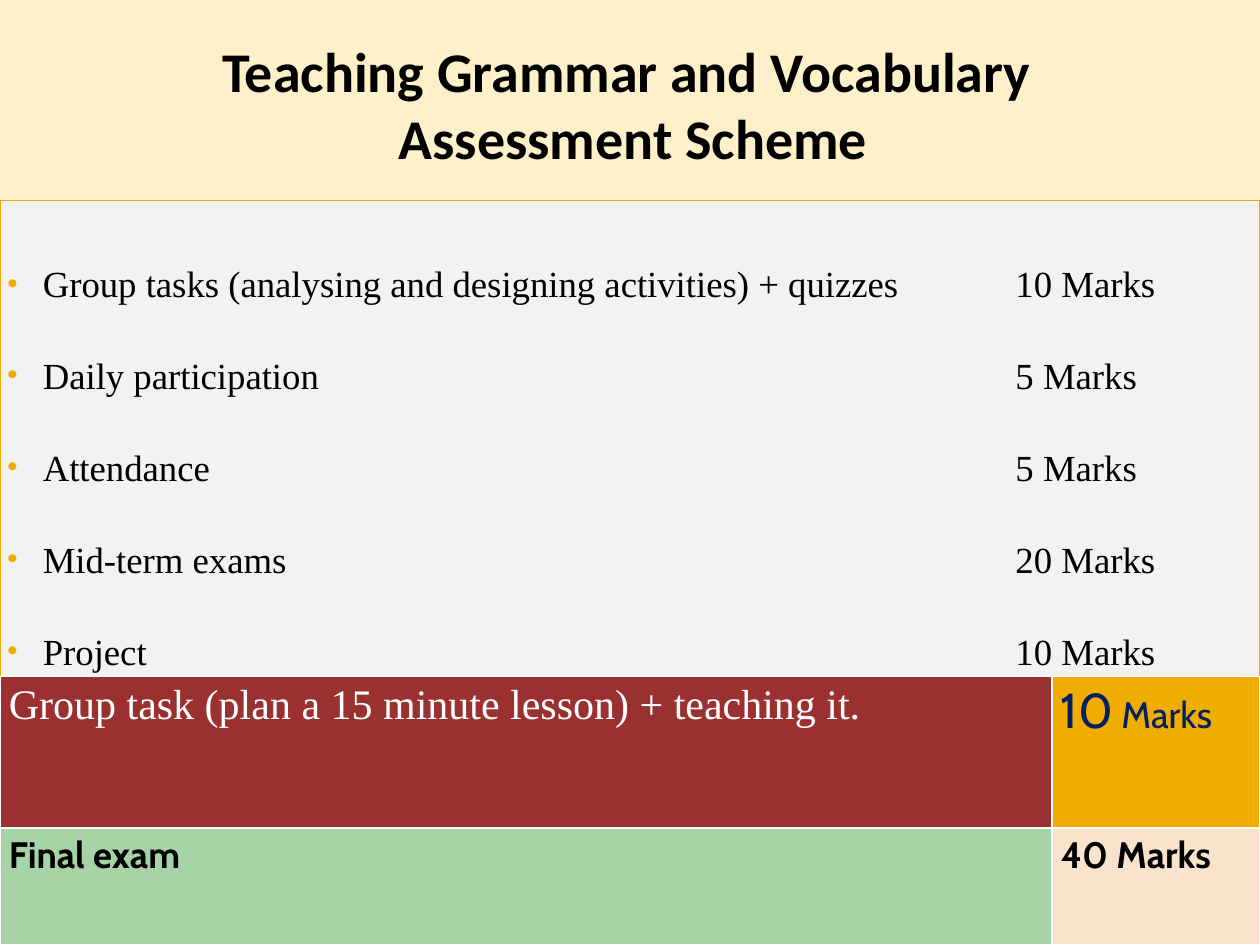
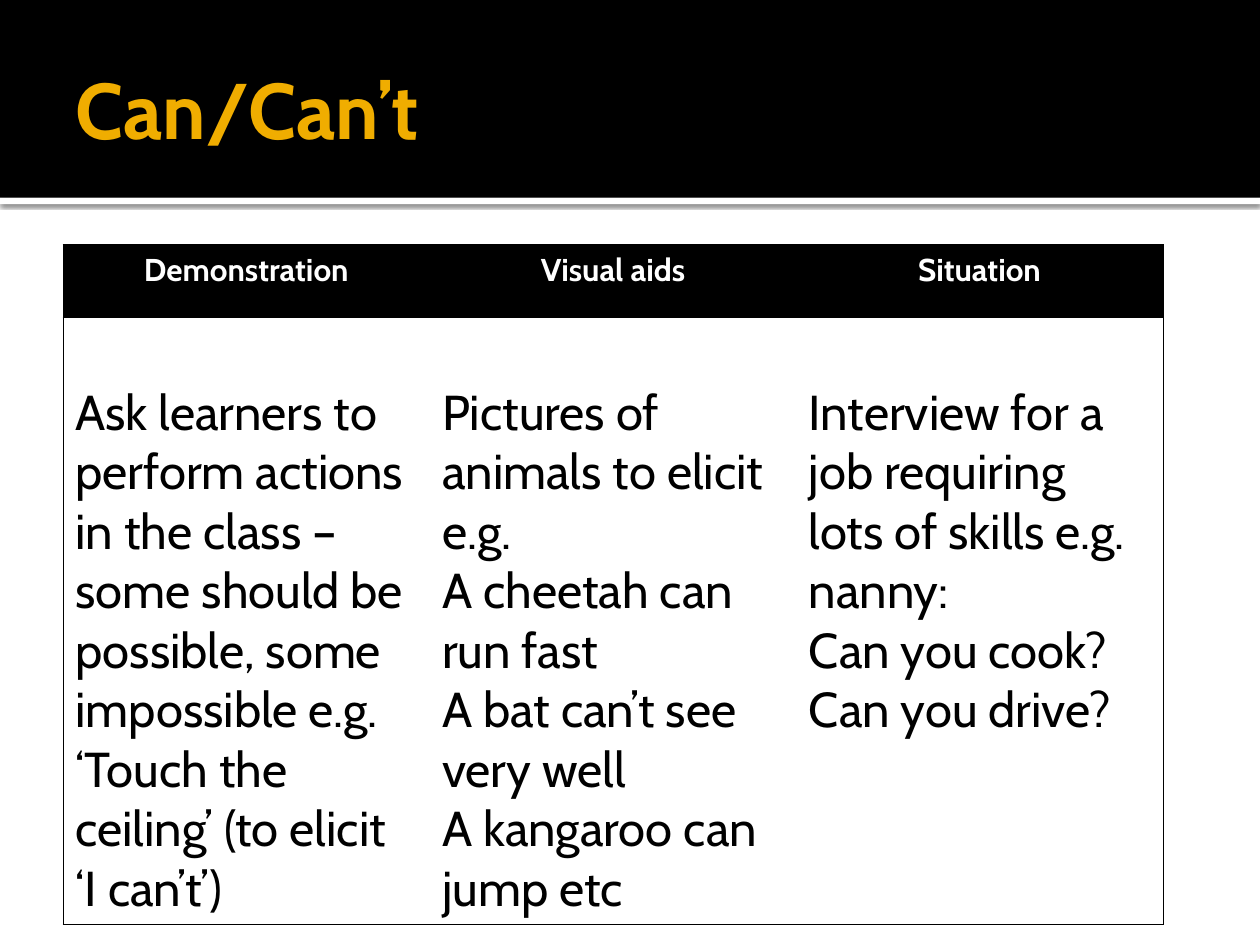
from dataclasses import dataclass

from lxml.etree import SubElement
from pptx import Presentation
from pptx.dml.color import RGBColor
from pptx.enum.shapes import MSO_SHAPE as Shape
from pptx.enum.text import MSO_ANCHOR as Anchor, MSO_AUTO_SIZE as AutoSize, PP_ALIGN as Align
from pptx.oxml import parse_xml
from pptx.oxml.ns import nsdecls, qn
from pptx.util import Inches, Pt


# Colours, fonts and type sizes
@dataclass(frozen=True)
class Theme:
    black: str = "000000"
    white: str = "FFFFFF"
    gold: str = "F0AD00"
    cream: str = "FFF0C9"
    grey: str = "F2F2F2"
    red: str = "9A3130"
    green: str = "A6D4A7"
    peach: str = "F9E3CC"
    navy: str = "002060"
    sans: str = "Cabin"
    serif: str = "Times New Roman"
    heading: str = "Calibri"
    title_size: int = 45
    scheme_title_size: int = 32
    mark_size: int = 28
    task_size: int = 24
    list_size: int = 21
    header_size: int = 18


THEME = Theme()
MARGIN_NAMES = ("margin_left", "margin_top", "margin_right", "margin_bottom")
SLIDE_WIDTH = 10
BAND_HEIGHT = 1.57

COMPONENTS = [
    ("Group tasks (analysing and designing activities) + quizzes", "10 Marks"),
    ("Daily participation", "5 Marks"),
    ("Attendance", "5 Marks"),
    ("Mid-term exams", "20 Marks"),
    ("Project", "10 Marks"),
]
TECHNIQUES = {
    "Demonstration": [
        "Ask learners to perform actions in the class – some should be possible, "
        "some impossible e.g. ‘Touch the ceiling’ (to elicit ‘I can’t’)",
    ],
    "Visual aids": [
        "Pictures of animals to elicit e.g.",
        "A cheetah can run fast",
        "A bat can’t see very well",
        "A kangaroo can jump etc",
    ],
    "Situation": [
        "Interview for a job requiring lots of skills e.g. nanny:",
        "Can you cook?",
        "Can you drive?",
    ],
}


# Formatting helpers
def set_font(target, name, size, color, bold=False):
    values = {"name": name, "size": Pt(size), "bold": bold}
    for attribute, value in values.items():
        setattr(target.font, attribute, value)
    target.font.color.rgb = RGBColor.from_string(color)


def set_fill(target, color):
    target.fill.solid()
    target.fill.fore_color.rgb = RGBColor.from_string(color)


def set_margins(target, *margins):
    for name, margin in zip(MARGIN_NAMES, margins):
        setattr(target, name, Inches(margin))


def place(shape, *box):
    for name, value in zip(("left", "top", "width", "height"), box):
        setattr(shape, name, Inches(value))


def add_box(slide, box, fill):
    shape = slide.shapes.add_shape(Shape.RECTANGLE, *map(Inches, box))
    shape.shadow.inherit = False
    set_fill(shape, fill)
    shape.line.fill.background()
    return shape


def add_shadow(shape):
    effects = shape.element.spPr.find(qn("a:effectLst"))
    effects.append(parse_xml(
        f'<a:outerShdw {nsdecls("a")} blurRad="{Pt(2.5)}" dist="{Pt(0.8)}" dir="5400000">'
        f'<a:srgbClr val="{THEME.black}"><a:alpha val="60000"/></a:srgbClr></a:outerShdw>'))


def add_bullet(paragraph, tab):
    """Hang the paragraph on a gold bullet, with one tab stop for the marks."""
    properties = paragraph._p.get_or_add_pPr()
    properties.set("marL", str(Inches(0.28)))
    properties.set("indent", str(Inches(-0.28)))
    color = SubElement(properties, qn("a:buClr"))
    SubElement(color, qn("a:srgbClr"), val=THEME.gold)
    SubElement(properties, qn("a:buSzPct"), val="80000")
    SubElement(properties, qn("a:buFont"), typeface="Arial")
    SubElement(properties, qn("a:buChar"), char="•")
    tabs = SubElement(properties, qn("a:tabLst"))
    SubElement(tabs, qn("a:tab"), pos=str(Inches(tab)), algn="l")


def set_borders(cell, color, width, sides):
    """Draw the given sides (from L, R, T, B) and clear the others."""
    properties = cell._tc.get_or_add_tcPr()
    for index, side in enumerate("LRTB"):
        paint = (f'<a:solidFill><a:srgbClr val="{color}"/></a:solidFill>'
                 if side in sides else "<a:noFill/>")
        properties.insert(index, parse_xml(
            f'<a:ln{side} {nsdecls("a")} w="{Pt(width)}">{paint}</a:ln{side}>'))


# Slide elements
def add_title(slide, text, box, size, font, color, align):
    title = slide.shapes.title
    place(title, *box)
    title.element.getparent().append(title.element)  # in front of the band
    frame = title.text_frame
    frame.text = text
    frame.word_wrap = True
    frame.auto_size = AutoSize.NONE
    frame.vertical_anchor = Anchor.MIDDLE
    set_margins(frame, 0.1, 0.05, 0.05, 0.05)
    paragraph = frame.paragraphs[0]
    paragraph.alignment = align
    set_font(paragraph, font, size, color, bold=True)
    return title


def add_band(slide):
    strip = add_box(slide, (0, BAND_HEIGHT, SLIDE_WIDTH, 0.05), THEME.white)
    add_shadow(strip)
    add_box(slide, (0, 0, SLIDE_WIDTH, BAND_HEIGHT), THEME.black)


def add_table(slide, left, top, widths, heights):
    frame = slide.shapes.add_table(
        len(heights), len(widths),
        *map(Inches, (left, top, sum(widths), sum(heights))))
    table = frame.table
    table.first_row = table.horz_banding = False
    for column, width in zip(table.columns, widths):
        column.width = Inches(width)
    for row, height in zip(table.rows, heights):
        row.height = Inches(height)
    return table


def add_marks_list(slide):
    panel = add_box(slide, (0, 1.59, SLIDE_WIDTH, 4.97), THEME.grey)
    panel.line.color.rgb = RGBColor.from_string(THEME.gold)
    panel.line.width = Pt(0.75)
    frame = panel.text_frame
    frame.word_wrap = True
    frame.vertical_anchor = Anchor.TOP
    set_margins(frame, 0.06, 0.13, 0.1, 0.05)
    for index, (component, marks) in enumerate(COMPONENTS):
        paragraph = frame.add_paragraph() if index else frame.paragraphs[0]
        paragraph.alignment = Align.JUSTIFY
        paragraph.line_spacing = 2.0
        paragraph.space_before = Pt(2.1 if index else 0)
        add_bullet(paragraph, tab=8)
        run = paragraph.add_run()
        run.text = f"{component}\t{marks}"
        set_font(run, THEME.serif, THEME.list_size, THEME.black)


def add_final_marks(slide):
    table = add_table(slide, 0, 5.37, (8.35, 1.65), (1.2, 0.93))
    bold_text = (THEME.sans, THEME.list_size, THEME.black, True)
    cells = [
        (THEME.red, [("Group task (plan a 15 minute lesson) + teaching it.",
                      THEME.serif, THEME.task_size, THEME.white)]),
        (THEME.gold, [("10", THEME.sans, THEME.mark_size, THEME.navy),
                      (" Marks", THEME.sans, THEME.list_size, THEME.navy)]),
        (THEME.green, [("Final exam", *bold_text)]),
        (THEME.peach, [("40 Marks", *bold_text)]),
    ]
    for cell, (fill, runs) in zip(table.iter_cells(), cells):
        set_fill(cell, fill)
        set_margins(cell, 0.07, 0.04, 0.07, 0.04)
        set_borders(cell, THEME.white, 1, "LRTB")
        for text, *font in runs:
            run = cell.text_frame.paragraphs[0].add_run()
            run.text = text
            set_font(run, *font)


def add_techniques(slide):
    table = add_table(slide, 0.5, 1.94, (2.91,) * 3, (0.58, 4.82))
    for column, (heading, lines) in enumerate(TECHNIQUES.items()):
        outer = ("L", "", "R")[column]
        header, body = table.cell(0, column), table.cell(1, column)
        header.text = heading
        header_text = header.text_frame.paragraphs[0]
        header_text.alignment = Align.CENTER
        set_font(header_text, THEME.sans, THEME.header_size, THEME.white, bold=True)
        body.text = "\n".join(lines)
        set_margins(body, 0.1, 0.52, 0.1, 0.05)
        for paragraph in body.text_frame.paragraphs:
            set_font(paragraph, THEME.sans, THEME.mark_size, THEME.black)
        for cell, fill in ((header, THEME.black), (body, THEME.white)):
            set_fill(cell, fill)
            set_borders(cell, THEME.black, 0.5, "TB" + outer)


# Slides
def build_scheme_slide(slide):
    title = add_title(
        slide, "Teaching Grammar and Vocabulary \vAssessment Scheme",
        (0, 0, SLIDE_WIDTH, 1.59), THEME.scheme_title_size,
        THEME.heading, THEME.black, Align.CENTER)
    title.text_frame.margin_top = Inches(0.1)
    set_fill(title, THEME.cream)
    add_marks_list(slide)
    add_final_marks(slide)


def build_can_slide(slide):
    add_band(slide)
    add_title(slide, "Can/Can’t", (0.5, 0.17, 9, 1.37), THEME.title_size,
              THEME.sans, THEME.gold, Align.LEFT)
    add_techniques(slide)


def main():
    presentation = Presentation()
    presentation.slide_width = Inches(SLIDE_WIDTH)
    presentation.slide_height = Inches(7.5)
    title_only = presentation.slide_layouts[5]
    for build in (build_scheme_slide, build_can_slide):
        build(presentation.slides.add_slide(title_only))
    presentation.save("out.pptx")


if __name__ == "__main__":
    main()
